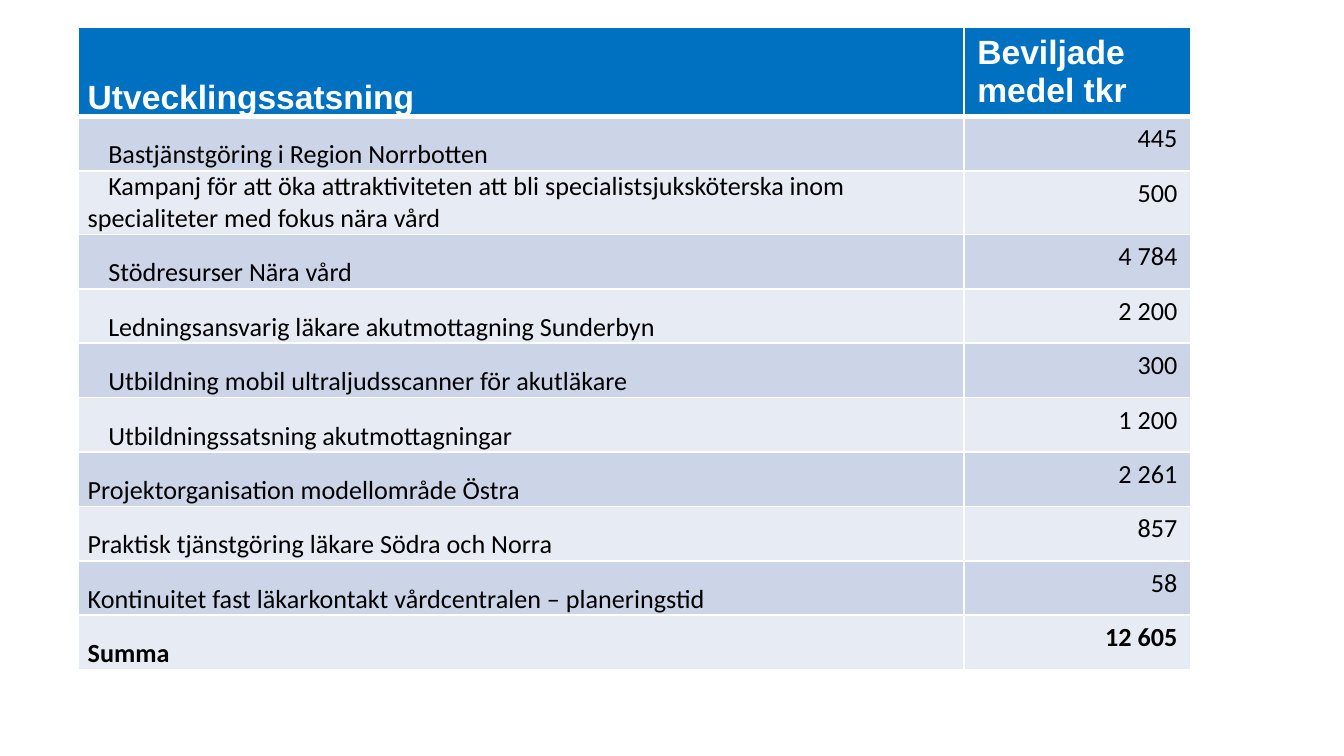
from lxml.etree import SubElement
from pptx import Presentation
from pptx.dml.color import RGBColor
from pptx.enum.text import MSO_ANCHOR as Anchor, PP_ALIGN as Align
from pptx.oxml.ns import qn
from pptx.util import Pt

WHITE, BLACK, HEADER_BLUE = "FFFFFF", "000000", "0070C0"
BANDS = ("CCD5E8", "E7EBF4")
COLUMN_WIDTHS = (474.4, 121.6)
ROW_HEIGHT = 29.15
HEADINGS = ("Utvecklingssatsning", "Beviljade medel tkr")
# Initiative, granted funds, first-line indent
INITIATIVES = [
    ("Bastjänstgöring i Region Norrbotten", "445", 11),
    ("Kampanj för att öka attraktiviteten att bli specialistsjuksköterska inom "
     "specialiteter med fokus nära vård", "500", 11),
    ("Stödresurser Nära vård", "4 784", 11),
    ("Ledningsansvarig läkare akutmottagning Sunderbyn", "2 200", 11),
    ("Utbildning mobil ultraljudsscanner för akutläkare", "300", 11),
    ("Utbildningssatsning akutmottagningar", "1 200", 11),
    ("Projektorganisation modellområde Östra", "2 261", 0),
    ("Praktisk tjänstgöring läkare Södra och Norra", "857", 0),
    ("Kontinuitet fast läkarkontakt vårdcentralen – planeringstid", "58", 0),
    ("Summa", "12 605", 0),
]


def color(hex_value):
    return RGBColor.from_string(hex_value)


def set_borders(cell, top=1, bottom=1):
    """Draw white borders; call before the fill, which must follow the lines."""
    properties = cell._tc.get_or_add_tcPr()
    for side, width in (("L", 1), ("R", 1), ("T", top), ("B", bottom)):
        line = SubElement(properties, qn(f"a:ln{side}"), w=str(Pt(width)))
        line_fill = SubElement(line, qn("a:solidFill"))
        SubElement(line_fill, qn("a:srgbClr"), val=WHITE)


def fill_cell(cell, fill):
    cell.fill.solid()
    cell.fill.fore_color.rgb = color(fill)


def write_cell(cell, text, font, size, text_color, bold, align=Align.LEFT, indent=0):
    paragraph = cell.text_frame.paragraphs[0]
    paragraph.alignment = align
    if indent:
        paragraph._p.get_or_add_pPr().set("indent", str(Pt(indent)))
    run = paragraph.add_run()
    run.text = text
    run.font.name = font
    run.font.size = Pt(size)
    run.font.bold = bold
    run.font.color.rgb = color(text_color)


def set_label_layout(cell):
    cell.vertical_anchor = Anchor.BOTTOM
    cell.margin_left = cell.margin_right = Pt(5)
    cell.margin_top = cell.margin_bottom = Pt(0)


def add_header(table):
    table.rows[0].height = Pt(46.6)
    for column, heading in enumerate(HEADINGS):
        cell = table.cell(0, column)
        set_borders(cell, bottom=3)
        fill_cell(cell, HEADER_BLUE)
        write_cell(cell, heading, "Arial", 18, WHITE, True)
    set_label_layout(table.cell(0, 0))


def add_initiative(table, row, initiative, funds, indent):
    table.rows[row].height = Pt(ROW_HEIGHT)
    label, amount = table.cell(row, 0), table.cell(row, 1)
    for cell in (label, amount):
        set_borders(cell, top=3 if row == 1 else 1)
        fill_cell(cell, BANDS[(row - 1) % 2])
    is_total = row == len(INITIATIVES)
    set_label_layout(label)
    write_cell(label, initiative, "Calibri", 14, BLACK, is_total, indent=indent)
    write_cell(amount, funds, "Calibri", 14, BLACK, is_total, Align.RIGHT)


def main():
    presentation = Presentation()
    presentation.slide_width, presentation.slide_height = Pt(720), Pt(405)
    slide = presentation.slides.add_slide(presentation.slide_layouts[6])

    row_count = len(INITIATIVES) + 1
    table = slide.shapes.add_table(
        row_count, len(COLUMN_WIDTHS), Pt(42), Pt(14.8),
        Pt(sum(COLUMN_WIDTHS)), Pt(ROW_HEIGHT * row_count)).table
    for column, width in zip(table.columns, COLUMN_WIDTHS):
        column.width = Pt(width)

    add_header(table)
    for row, (initiative, funds, indent) in enumerate(INITIATIVES, start=1):
        add_initiative(table, row, initiative, funds, indent)
    presentation.save("out.pptx")


if __name__ == "__main__":
    main()
